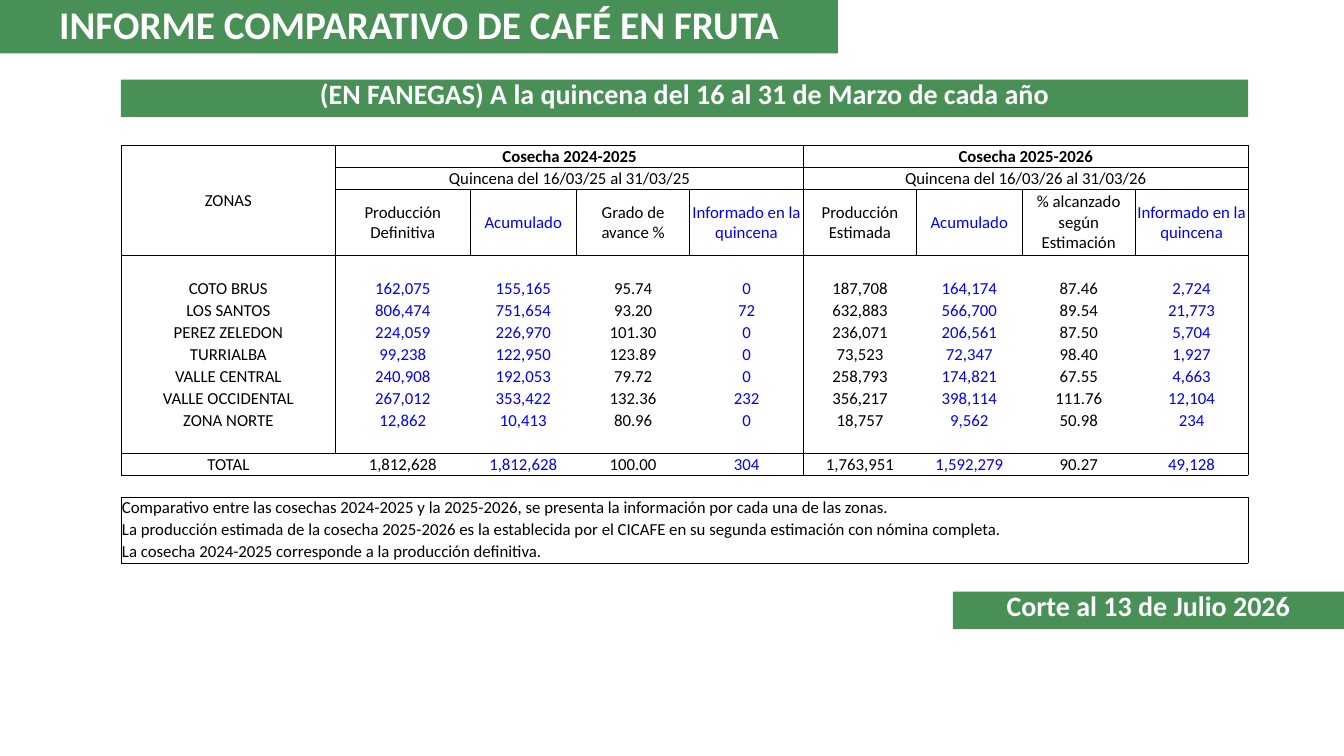
"""Build the coffee harvest comparison slide with its banners and table."""
from lxml import etree
from pptx import Presentation
from pptx.dml.color import RGBColor
from pptx.enum.shapes import MSO_SHAPE
from pptx.enum.text import MSO_ANCHOR, MSO_AUTO_SIZE, PP_ALIGN
from pptx.oxml.ns import qn
from pptx.util import Inches, Pt

RECTANGLE = MSO_SHAPE.RECTANGLE
TOP, MIDDLE, BOTTOM = MSO_ANCHOR.TOP, MSO_ANCHOR.MIDDLE, MSO_ANCHOR.BOTTOM
LEFT, CENTER = PP_ALIGN.LEFT, PP_ALIGN.CENTER
NO_AUTOFIT = MSO_AUTO_SIZE.NONE

FONT = "Calibri"
GREEN, WHITE, BLACK, BLUE = "499057", "FFFFFF", "000000", "0000FF"

TITLE = "INFORME COMPARATIVO DE CAFÉ EN FRUTA"
BANNERS = [
    ("(EN FANEGAS) A la quincena del 16 al 31 de Marzo de cada año", (1.2, 0.79, 11.18, 0.37)),
    ("Corte al 13 de Julio 2026", (9.45, 5.87, 3.88, 0.37)),
]
HARVESTS = [
    (1, "Cosecha 2024-2025", "Quincena del 16/03/25 al 31/03/25"),
    (5, "Cosecha 2025-2026", "Quincena del 16/03/26 al 31/03/26"),
]
HEADINGS = [
    "Producción Definitiva", "Acumulado", "Grado de avance %", "Informado en la quincena",
    "Producción Estimada", "Acumulado", "% alcanzado según Estimación", "Informado en la quincena",
]
ZONES = [
    ("COTO BRUS", "162,075", "155,165", "95.74", "0", "187,708", "164,174", "87.46", "2,724"),
    ("LOS SANTOS", "806,474", "751,654", "93.20", "72", "632,883", "566,700", "89.54", "21,773"),
    ("PEREZ ZELEDON", "224,059", "226,970", "101.30", "0", "236,071", "206,561", "87.50", "5,704"),
    ("TURRIALBA", "99,238", "122,950", "123.89", "0", "73,523", "72,347", "98.40", "1,927"),
    ("VALLE CENTRAL", "240,908", "192,053", "79.72", "0", "258,793", "174,821", "67.55", "4,663"),
    ("VALLE OCCIDENTAL", "267,012", "353,422", "132.36", "232", "356,217", "398,114", "111.76", "12,104"),
    ("ZONA NORTE", "12,862", "10,413", "80.96", "0", "18,757", "9,562", "50.98", "234"),
]
TOTAL = ("TOTAL", "1,812,628", "1,812,628", "100.00", "304", "1,763,951", "1,592,279", "90.27", "49,128")
NOTES = [
    "Comparativo entre las cosechas 2024-2025 y la 2025-2026, se presenta la información por cada una de las zonas.",
    "La producción estimada de la cosecha 2025-2026 es la establecida por el CICAFE en su segunda estimación con nómina completa.",
    "La cosecha 2024-2025 corresponde a la producción definitiva.",
]

COLUMN_WIDTHS = [2.13, 1.33, 1.06, 1.12, 1.13, 1.12, 1.05, 1.12, 1.12]
COLUMNS = len(COLUMN_WIDTHS)
TABLE_LEFT, TABLE_TOP, TABLE_HEIGHT = 1.2, 1.44, 4.15
HEADING_ROW, HEADING_LINES = 2, 3
FIRST_ZONE_ROW = 4
TOTAL_ROW = FIRST_ZONE_ROW + len(ZONES) + 1
FIRST_NOTE_ROW = TOTAL_ROW + 2
ROWS = FIRST_NOTE_ROW + len(NOTES)


def color(value):
    return RGBColor.from_string(value)


def format_text(frame, size, value, bold=False, align=CENTER, spacing=None):
    frame.word_wrap = True
    for para in frame.paragraphs:
        para.alignment = align
        if spacing:
            para.line_spacing = spacing
        for span in para.runs:
            span.font.name = FONT
            span.font.size = Pt(size)
            span.font.bold = bold
            span.font.color.rgb = color(value)


def fill_banner(shape, text, bounds, size):
    shape.left, shape.top, shape.width, shape.height = map(Inches, bounds)
    shape.fill.solid()
    shape.fill.fore_color.rgb = color(GREEN)
    shape.line.fill.background()
    frame = shape.text_frame
    frame.text = text
    frame.auto_size = NO_AUTOFIT
    frame.vertical_anchor = MIDDLE
    format_text(frame, size, WHITE, True, spacing=0.9)


def table_content():
    content = {(0, 0): "ZONAS"}
    for column, harvest, fortnight in HARVESTS:
        content[0, column] = harvest
        content[1, column] = fortnight
    lines = [(HEADING_ROW, 1, HEADINGS), (TOTAL_ROW, 0, TOTAL)]
    lines += [(FIRST_ZONE_ROW + index, 0, zone) for index, zone in enumerate(ZONES)]
    lines += [(FIRST_NOTE_ROW + index, 0, [note]) for index, note in enumerate(NOTES)]
    for row, start, texts in lines:
        for column, text in enumerate(texts, start):
            content[row, column] = text
    return content


def text_color(row, column):
    in_zones = FIRST_ZONE_ROW <= row < TOTAL_ROW
    is_blue = HEADING_ROW <= row and column in (2, 4, 6, 8) or in_zones and column == 1
    return BLUE if is_blue else BLACK


def vertical_rule(row, edge):
    if row == HEADING_ROW:
        return True
    if row < TOTAL_ROW:
        return edge in (0, 1, 5, COLUMNS)
    if row == TOTAL_ROW:
        return edge in (0, 5, COLUMNS)
    return row >= FIRST_NOTE_ROW and edge in (0, COLUMNS)


def horizontal_rule(edge, column):
    full_width = (0, HEADING_ROW + 1, TOTAL_ROW, TOTAL_ROW + 1, FIRST_NOTE_ROW, ROWS)
    return edge in full_width or edge in (1, 2) and column > 0


def set_borders(cell, row, column):
    end_row = row + (cell.span_height if cell.is_merge_origin else 1)
    end_column = column + (cell.span_width if cell.is_merge_origin else 1)
    sides = {
        "a:lnL": vertical_rule(row, column),
        "a:lnR": vertical_rule(row, end_column),
        "a:lnT": horizontal_rule(row, column),
        "a:lnB": horizontal_rule(end_row, column),
    }
    properties = cell._tc.get_or_add_tcPr()
    for index, (side, drawn) in enumerate(sides.items()):
        line = etree.Element(qn(side), w=str(Pt(0.5)))
        if drawn:
            solid = etree.SubElement(line, qn("a:solidFill"))
            etree.SubElement(solid, qn("a:srgbClr"), val=BLACK)
        else:
            etree.SubElement(line, qn("a:noFill"))
        properties.insert(index, line)


def format_cell(cell, row, column, text):
    is_note = row >= FIRST_NOTE_ROW
    cell.margin_left = cell.margin_right = cell.margin_top = Inches(0.01)
    cell.margin_bottom = 0
    is_middle = row == HEADING_ROW or (row, column) == (0, 0)
    cell.vertical_anchor = TOP if is_note else MIDDLE if is_middle else BOTTOM
    cell.fill.background()
    if text:
        cell.text_frame.text = text
        is_harvest = row == 0 and column > 0
        format_text(cell.text_frame, 12, text_color(row, column), is_harvest, LEFT if is_note else CENTER)
    else:
        etree.SubElement(cell.text_frame.paragraphs[0]._p, qn("a:endParaRPr"), sz="1200")
    set_borders(cell, row, column)


def add_harvest_table(page):
    frame = page.shapes.add_table(
        ROWS, COLUMNS, Inches(TABLE_LEFT), Inches(TABLE_TOP),
        Inches(sum(COLUMN_WIDTHS)), Inches(TABLE_HEIGHT))
    table = frame.table
    table.first_row = table.horz_banding = False
    for column, width in zip(table.columns, COLUMN_WIDTHS):
        column.width = Inches(width)
    line_height = TABLE_HEIGHT / (ROWS + HEADING_LINES - 1)
    for index, row in enumerate(table.rows):
        row.height = Inches(line_height * (HEADING_LINES if index == HEADING_ROW else 1))

    table.cell(0, 0).merge(table.cell(HEADING_ROW, 0))
    for column, *_ in HARVESTS:
        for row in range(HEADING_ROW):
            table.cell(row, column).merge(table.cell(row, column + 3))
    for row in range(FIRST_NOTE_ROW, ROWS):
        table.cell(row, 0).merge(table.cell(row, COLUMNS - 1))

    content = table_content()
    for row in range(ROWS):
        for column in range(COLUMNS):
            format_cell(table.cell(row, column), row, column, content.get((row, column)))


def main():
    deck = Presentation()
    deck.slide_width, deck.slide_height = Inches(13.33), Inches(7.5)
    page = deck.slides.add_slide(deck.slide_layouts[5])
    fill_banner(page.shapes.title, TITLE, (0, 0, 8.31, 0.53), 28)
    for text, bounds in BANNERS:
        banner = page.shapes.add_shape(RECTANGLE, *map(Inches, bounds))
        banner.shadow.inherit = False
        fill_banner(banner, text, bounds, 20)
        banner.text_frame.margin_top, banner.text_frame.margin_bottom = Inches(0.02), Inches(0.08)
    add_harvest_table(page)
    deck.save("out.pptx")


if __name__ == "__main__":
    main()
